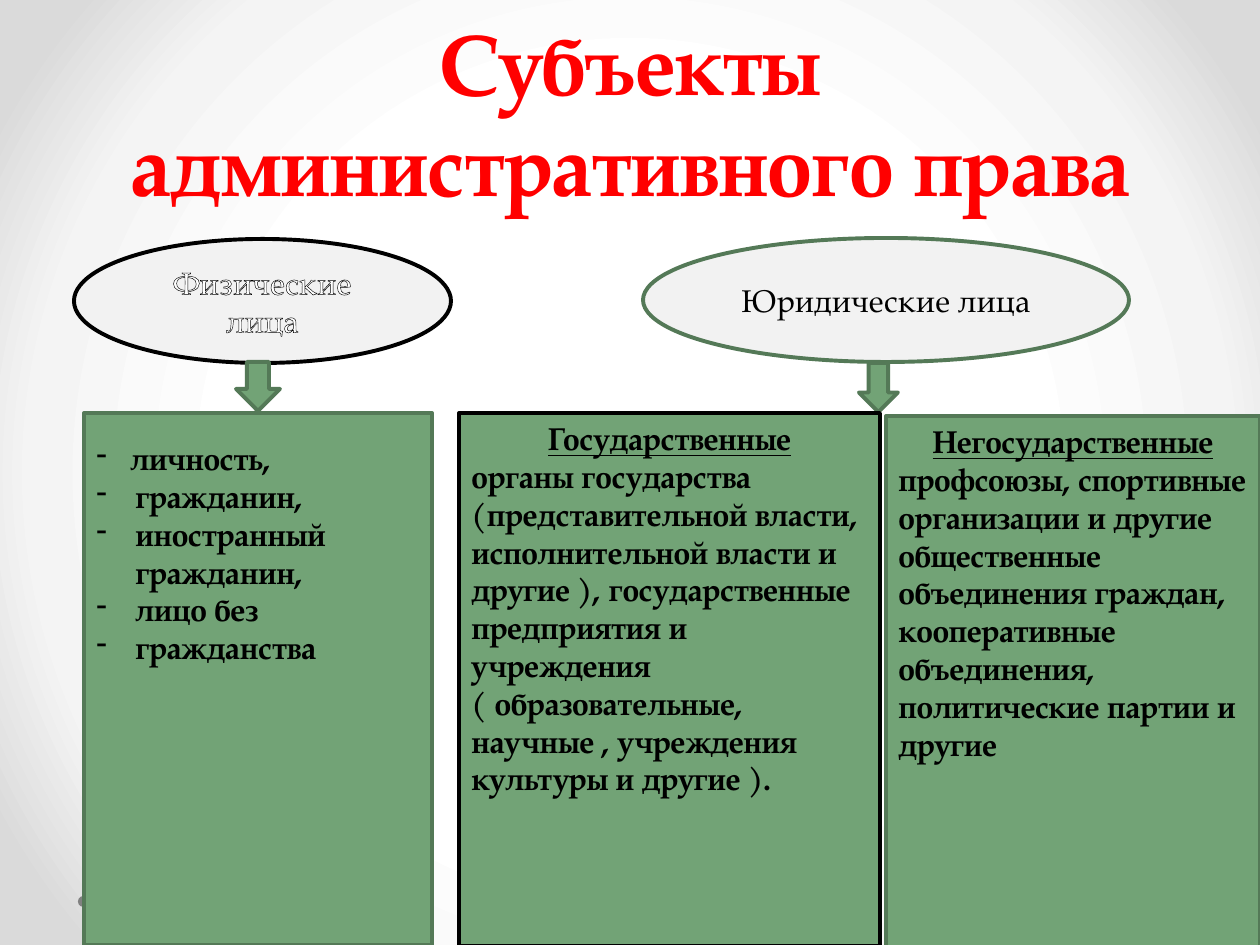
from dataclasses import dataclass

from lxml import etree
from pptx import Presentation
from pptx.dml.color import RGBColor
from pptx.enum.shapes import MSO_SHAPE
from pptx.enum.text import MSO_ANCHOR, PP_ALIGN
from pptx.oxml.ns import qn
from pptx.util import Emu, Pt

OVAL, RECT, DOWN = MSO_SHAPE.OVAL, MSO_SHAPE.RECTANGLE, MSO_SHAPE.DOWN_ARROW
LEFT, CENTER = PP_ALIGN.LEFT, PP_ALIGN.CENTER
TOP, MIDDLE, BOTTOM = MSO_ANCHOR.TOP, MSO_ANCHOR.MIDDLE, MSO_ANCHOR.BOTTOM
EMU_PER_PX = 914400 / 126


@dataclass(frozen=True)
class Theme:
    font: str = "TeX Gyre Pagella"
    title_size: float = 48.6
    title_leading: float = 58
    body_size: float = 18
    line_width: float = 2.25
    title: str = "FF0000"
    ink: str = "000000"
    white: str = "FFFFFF"
    dot: str = "808080"
    oval: str = "F2F2F2"
    green: str = "72A376"
    border: str = "547957"
    backdrop: tuple = ((50, "FFFFFF"), (76, "F4F4F4"), (92, "DADADA"))


THEME = Theme()


def px(value):
    return Emu(round(value * EMU_PER_PX))


def add_solid(parent, color):
    solid = etree.SubElement(parent, qn("a:solidFill"))
    etree.SubElement(solid, qn("a:srgbClr"), val=color)


def add_text(frame, text, first=False, size=THEME.body_size, color=THEME.ink,
             bold=False, underline=False, align=LEFT, leading=None,
             outlined=False, hanging=0):
    """Write one paragraph; hanging is the indent in px of a dash bullet."""
    paragraph = frame.paragraphs[0] if first else frame.add_paragraph()
    paragraph.alignment = align
    if leading:
        paragraph.line_spacing = Pt(leading)
    if hanging:
        props = paragraph._p.get_or_add_pPr()
        props.set("marL", str(px(hanging)))
        props.set("indent", str(-px(hanging)))
        etree.SubElement(props, qn("a:buFontTx"))
        etree.SubElement(props, qn("a:buChar"), char="-")
    run = paragraph.add_run()
    run.text = text
    font = run.font
    font.name, font.size = THEME.font, Pt(size)
    font.bold, font.underline = bold, underline
    font.color.rgb = RGBColor.from_string(color)
    if outlined:
        contour = etree.Element(qn("a:ln"), w=str(Pt(0.75)))
        add_solid(contour, THEME.ink)
        run._r.get_or_add_rPr().insert(0, contour)


class SlideBuilder:
    def __init__(self, slide, theme):
        self.slide, self.theme = slide, theme

    def backdrop(self):
        fill = self.slide.background.fill
        fill.gradient()
        gradient = fill._xPr.find(qn("a:gradFill"))
        for child in list(gradient):
            gradient.remove(child)
        stops = etree.SubElement(gradient, qn("a:gsLst"))
        for percent, color in self.theme.backdrop:
            stop = etree.SubElement(stops, qn("a:gs"), pos=str(percent * 1000))
            etree.SubElement(stop, qn("a:srgbClr"), val=color)
        circle = etree.SubElement(gradient, qn("a:path"), path="circle")
        etree.SubElement(circle, qn("a:fillToRect"),
                         {side: "50000" for side in "ltrb"})

    def shape(self, kind, box, fill, line=None, anchor=TOP):
        shape = self.slide.shapes.add_shape(kind, *map(px, box))
        shape.shadow.inherit = False
        shape.fill.solid()
        shape.fill.fore_color.rgb = RGBColor.from_string(fill)
        if line:
            shape.line.color.rgb = RGBColor.from_string(line)
            shape.line.width = Pt(self.theme.line_width)
        else:
            shape.line.fill.background()
        shape.text_frame.word_wrap = True
        shape.text_frame.vertical_anchor = anchor
        return shape.text_frame

    def text_box(self, box, anchor=TOP):
        frame = self.slide.shapes.add_textbox(*map(px, box)).text_frame
        frame.word_wrap = True
        frame.vertical_anchor = anchor
        return frame

    def category(self, box, label, line, color):
        frame = self.shape(OVAL, box, self.theme.oval, line, MIDDLE)
        add_text(frame, label, first=True, color=color, align=CENTER,
                 outlined=True)

    def arrow(self, box):
        self.shape(DOWN, box, self.theme.green, self.theme.border)

    def panel(self, box, line, heading=None, body=None):
        frame = self.shape(RECT, box, self.theme.green, line)
        if heading:
            add_text(frame, heading, first=True, bold=True, underline=True,
                     align=CENTER)
            add_text(frame, body, bold=True)

    def dash_list(self, box, items):
        frame = self.text_box(box)
        for index, item in enumerate(items):
            add_text(frame, item, first=index == 0, bold=True,
                     hanging=39 if index else 34)


def main():
    presentation = Presentation()
    presentation.slide_width, presentation.slide_height = px(1260), px(945)
    slide = presentation.slides.add_slide(presentation.slide_layouts[6])
    builder = SlideBuilder(slide, THEME)

    # Background and title
    builder.backdrop()
    builder.shape(OVAL, (78, 896, 11, 11), THEME.dot)
    title = builder.text_box((63, 0, 1134, 220), BOTTOM)
    add_text(title, "Субъекты административного права", first=True,
             size=THEME.title_size, color=THEME.title, bold=True,
             align=CENTER, leading=THEME.title_leading)

    # Kinds of subjects, with arrows to their panels
    builder.category((74, 239, 377, 124), "Физические лица",
                     THEME.ink, THEME.white)
    builder.category((643, 238, 486, 124), "Юридические лица",
                     THEME.border, THEME.ink)
    builder.arrow((236, 362, 44, 49))
    builder.arrow((859, 363, 39, 49))

    # Individuals
    builder.panel((84, 413, 348, 532), THEME.border)

    # State bodies
    builder.panel(
        (459, 413, 421, 533), THEME.ink, "Государственные",
        "органы государства (представительной власти, исполнительной власти "
        "и другие ), государственные предприятия и учреждения "
        "( образовательные, научные , учреждения культуры и другие ).")

    builder.dash_list(
        (84, 433, 348, 242),
        ("личность,", "гражданин,", "иностранный гражданин,", "лицо без",
         "гражданства"))

    # Non-state bodies
    builder.panel(
        (886, 416, 374, 532), THEME.border, "Негосударственные",
        "профсоюзы, спортивные организации и другие общественные объединения "
        "граждан, кооперативные объединения, политические партии и другие")

    presentation.save("out.pptx")


if __name__ == "__main__":
    main()
